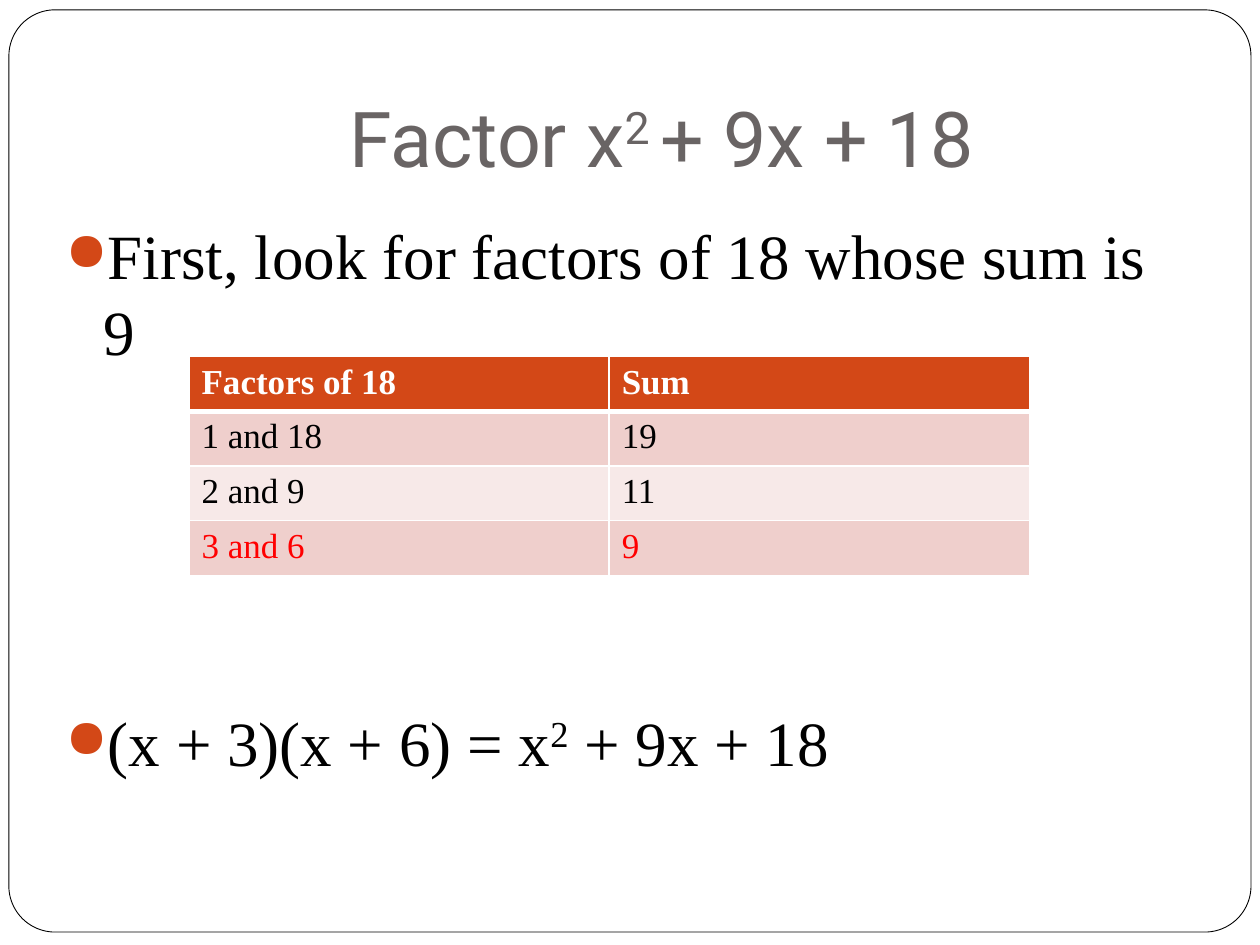
from lxml.etree import SubElement
from pptx import Presentation
from pptx.dml.color import RGBColor
from pptx.enum.shapes import MSO_SHAPE as Shape
from pptx.enum.text import MSO_ANCHOR as Anchor, MSO_AUTO_SIZE as AutoSize, PP_ALIGN as Align
from pptx.oxml.ns import qn
from pptx.util import Cm, Pt

SERIF = "Times New Roman"
ACCENT, BLACK, WHITE, RED, GREY = "D34817", "000000", "FFFFFF", "FF0000", "696464"
BANDS = ("EFCFCC", "F7E9E8")


def color(hex_string):
    return RGBColor.from_string(hex_string)


def set_font(paragraph, name, size, hex_string, bold=False):
    font = paragraph.font
    font.name, font.size, font.bold = name, Pt(size), bold
    font.color.rgb = color(hex_string)


def add_runs(paragraph, parts):
    """Add text parts in turn; every second part is superscript."""
    for index, text in enumerate(parts):
        run = paragraph.add_run()
        run.text = text
        if index % 2:
            run.font._element.set("baseline", "30000")


def place(shape, left, top, width, height):
    shape.left, shape.top = Cm(left), Cm(top)
    shape.width, shape.height = Cm(width), Cm(height)


def add_frame(slide, left, top, width, height):
    frame = slide.shapes.add_shape(
        Shape.ROUNDED_RECTANGLE, Cm(left), Cm(top), Cm(width), Cm(height))
    frame.adjustments[0] = 0.05
    frame.shadow.inherit = False
    frame.fill.solid()
    frame.fill.fore_color.rgb = color(WHITE)
    frame.line.color.rgb = color(BLACK)
    frame.line.width = Pt(0.5)
    # Keep the frame behind the title
    slide.shapes.title.element.addprevious(frame.element)


def format_title(slide, parts, left, top, width, height):
    title = slide.shapes.title
    place(title, left, top, width, height)
    text_frame = title.text_frame
    text_frame.auto_size = AutoSize.NONE
    text_frame.vertical_anchor = Anchor.BOTTOM
    text_frame.margin_bottom = Cm(0.25)
    paragraph = text_frame.paragraphs[0]
    paragraph.alignment = Align.CENTER
    add_runs(paragraph, parts)
    set_font(paragraph, "Roboto", 44, GREY)


def add_bullet(paragraph):
    properties = paragraph._p.get_or_add_pPr()
    properties.set("marL", str(Cm(0.76)))
    properties.set("indent", str(-Cm(0.76)))
    bullet_color = SubElement(properties, qn("a:buClr"))
    SubElement(bullet_color, qn("a:srgbClr"), val=ACCENT)
    SubElement(properties, qn("a:buSzPct"), val="85000")
    SubElement(properties, qn("a:buChar"), char="●")


def add_body(slide, items, left, top, width, height):
    """Add bullets, each given as space before and text parts."""
    text_frame = slide.shapes.add_textbox(
        Cm(left), Cm(top), Cm(width), Cm(height)).text_frame
    text_frame.word_wrap = True
    for index, (space_before, parts) in enumerate(items):
        paragraph = text_frame.add_paragraph() if index else text_frame.paragraphs[0]
        paragraph.space_before = Pt(space_before)
        add_bullet(paragraph)
        add_runs(paragraph, parts)
        set_font(paragraph, SERIF, 36, BLACK)


def set_borders(cell, widths):
    properties = cell._tc.get_or_add_tcPr()
    for index, (side, width) in enumerate(widths.items()):
        line = SubElement(properties, qn(f"a:ln{side}"), w=str(Pt(width)))
        fill = SubElement(line, qn("a:solidFill"))
        SubElement(fill, qn("a:srgbClr"), val=WHITE)
        # Borders come before the cell fill
        properties.insert(index, line)


def add_factor_table(slide, rows, answer_row, left, top, width, height):
    table = slide.shapes.add_table(
        len(rows), len(rows[0]), Cm(left), Cm(top), Cm(width), Cm(height)).table
    for row_index, row in enumerate(rows):
        header = row_index == 0
        fill = ACCENT if header else BANDS[(row_index - 1) % 2]
        text_color = WHITE if header else RED if row_index == answer_row else BLACK
        for column_index, text in enumerate(row):
            cell = table.cell(row_index, column_index)
            cell.text = text
            set_font(cell.text_frame.paragraphs[0], SERIF, 20, text_color, header)
            cell.fill.solid()
            cell.fill.fore_color.rgb = color(fill)
            set_borders(cell, {"L": 1, "R": 1,
                               "T": 3 if row_index == 1 else 1,
                               "B": 3 if header else 1})


def main():
    presentation = Presentation()
    presentation.slide_width, presentation.slide_height = Cm(25.4), Cm(19.05)
    slide = presentation.slides.add_slide(presentation.slide_layouts[5])

    add_frame(slide, 0.18, 0.2, 25.04, 18.59)
    format_title(slide, ["Factor x", "2 ", "+ 9x + 18"], 2.54, 0.76, 21.59, 3.18)
    # The wide gap before the second bullet leaves room for the table
    add_body(slide, [
        (5.8, ["First, look for factors of 18 whose sum is 9"]),
        (192, ["(x + 3)(x + 6) = x", "2", " + 9x + 18"]),
    ], 1.07, 4.24, 22.86, 12.57)
    add_factor_table(slide, [
        ("Factors of 18", "Sum"),
        ("1 and 18", "19"),
        ("2 and 9", "11"),
        ("3 and 6", "9"),
    ], 3, 3.81, 7.19, 16.94, 4.14)

    presentation.save("out.pptx")


if __name__ == "__main__":
    main()
